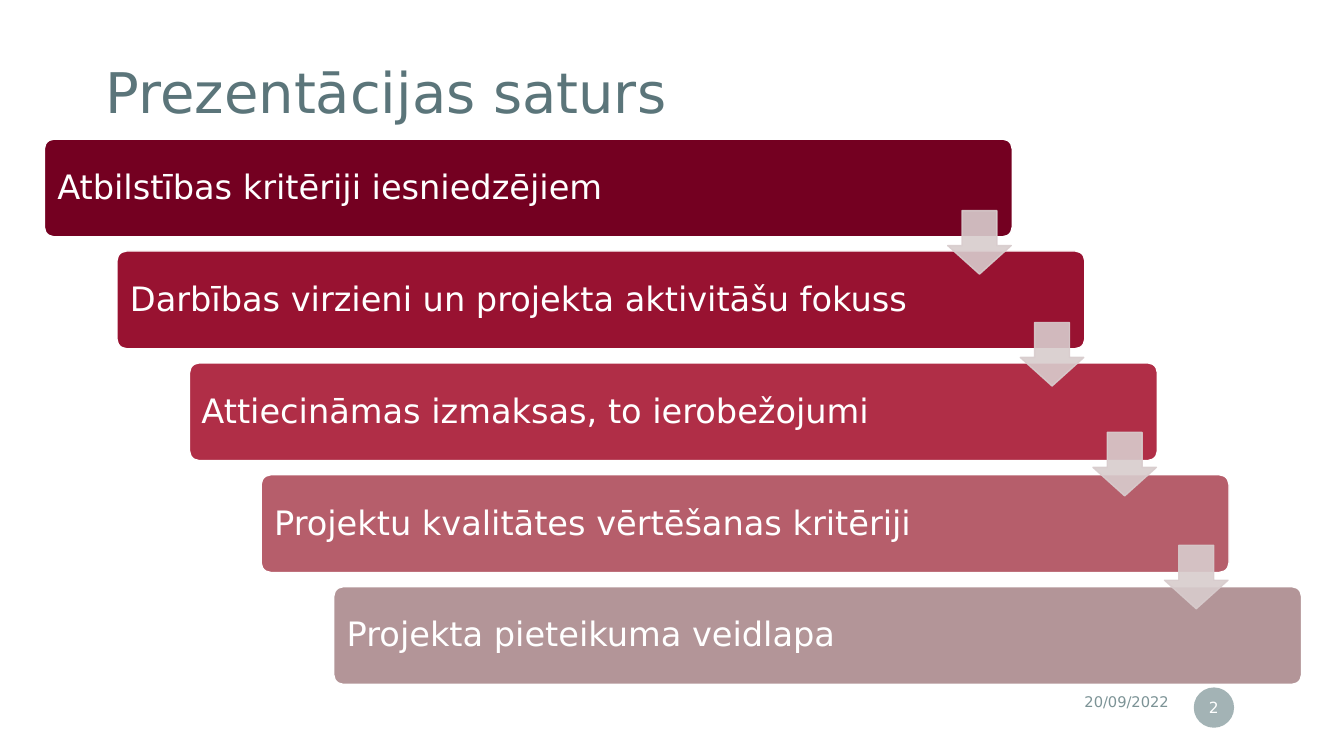
from lxml.etree import SubElement
from pptx import Presentation
from pptx.dml.color import RGBColor
from pptx.enum.shapes import MSO_SHAPE
from pptx.enum.text import MSO_ANCHOR, PP_ALIGN
from pptx.oxml.ns import qn
from pptx.util import Pt

PX = 9144
FONT = "DejaVu Sans"
COLORS = {
    "title": "5B757A",
    "footer": "7C9396",
    "white": "FFFFFF",
    "arrow": "D8CCCD",
}
STEPS = [
    ("Atbilstības kritēriji iesniedzējiem", "740021", 843),
    ("Darbības virzieni un projekta aktivitāšu fokuss", "981231", 819),
    ("Attiecināmas izmaksas, to ierobežojumi", "B02E47", 819),
    ("Projektu kvalitātes vērtēšanas kritēriji", "B65E6B", 819),
    ("Projekta pieteikuma veidlapa", "B39598", 819),
]
ARROW_TOPS = [71, 182, 291, 403]


def emu(*lengths):
    return [round(length) * PX for length in lengths]


def paint(color_format, color, alpha=None):
    color_format.solid()
    color_format.fore_color.rgb = RGBColor.from_string(color)
    if alpha is not None:
        color_element = color_format._xPr.find(".//" + qn("a:srgbClr"))
        SubElement(color_element, qn("a:alpha"), val=str(alpha * 1000))


def add_preset(slide, preset, box, fill, line=None, alpha=None, adjustments=()):
    shape = slide.shapes.add_shape(preset, *emu(*box))
    shape.shadow.inherit = False
    paint(shape.fill, fill, alpha)
    if line:
        paint(shape.line.fill, line, alpha)
        shape.line.width = Pt(1)
    else:
        shape.line.fill.background()
    for index, value in enumerate(adjustments):
        shape.adjustments[index] = value
    return shape


def write(shape, text, size, color, insets, align=PP_ALIGN.LEFT, spacing=None):
    frame = shape.text_frame
    frame.word_wrap = True
    frame.vertical_anchor = MSO_ANCHOR.MIDDLE
    frame.margin_left = frame.margin_right = insets[0] * PX
    frame.margin_top = frame.margin_bottom = insets[1] * PX
    paragraph = frame.paragraphs[0]
    paragraph.alignment = align
    if spacing:
        paragraph.line_spacing = spacing
    run = paragraph.add_run()
    run.text = text
    run.font.name = FONT
    run.font.size = Pt(size)
    run.font.color.rgb = RGBColor.from_string(color)


def add_title(slide, box):
    title = slide.shapes.add_textbox(*emu(*box))
    write(title, "Prezentācijas saturs", 40, COLORS["title"], (20, 20), spacing=0.9)


def add_footer(slide, box):
    left, top, width, height = box
    date = slide.shapes.add_textbox(*emu(left, top, width - 55, height - 8))
    write(date, "20/09/2022", 10.5, COLORS["footer"], (10, 5), PP_ALIGN.RIGHT)
    badge_box = (left + width - 40, top + 3, 40, 40)
    badge = add_preset(slide, MSO_SHAPE.OVAL, badge_box, COLORS["footer"], alpha=70)
    write(badge, "2", 11, COLORS["white"], (2, 5), PP_ALIGN.CENTER)


def add_staircase(slide, box):
    left, top, width, height = box
    bar_width, bar_height = 960, 97
    step_x = (width - bar_width) / (len(STEPS) - 1)
    step_y = (height - bar_height) / (len(STEPS) - 1)
    for index, (text, fill, label_width) in enumerate(STEPS):
        x, y = left + index * step_x, top + index * step_y
        add_preset(slide, MSO_SHAPE.ROUNDED_RECTANGLE, (x, y, bar_width, bar_height),
                   fill, COLORS["white"], adjustments=(0.1,))
        label = slide.shapes.add_textbox(*emu(x + 3, y + 3, label_width, bar_height - 5))
        write(label, text, 24, COLORS["white"], (10, 10), spacing=0.9)
    for index, offset in enumerate(ARROW_TOPS):
        arrow_box = (left + 896 + index * step_x, top + offset, 63, 63)
        add_preset(slide, MSO_SHAPE.DOWN_ARROW, arrow_box, COLORS["arrow"],
                   COLORS["arrow"], alpha=90, adjustments=(0.55, 0.45))


def main():
    presentation = Presentation()
    presentation.slide_width, presentation.slide_height = emu(1333, 750)
    slide = presentation.slides.add_slide(presentation.slide_layouts[6])
    add_title(slide, (85, 35, 839, 119))
    add_footer(slide, (868, 679, 356, 43))
    add_staircase(slide, (44, 138, 1247, 541))
    presentation.save("out.pptx")


if __name__ == "__main__":
    main()
